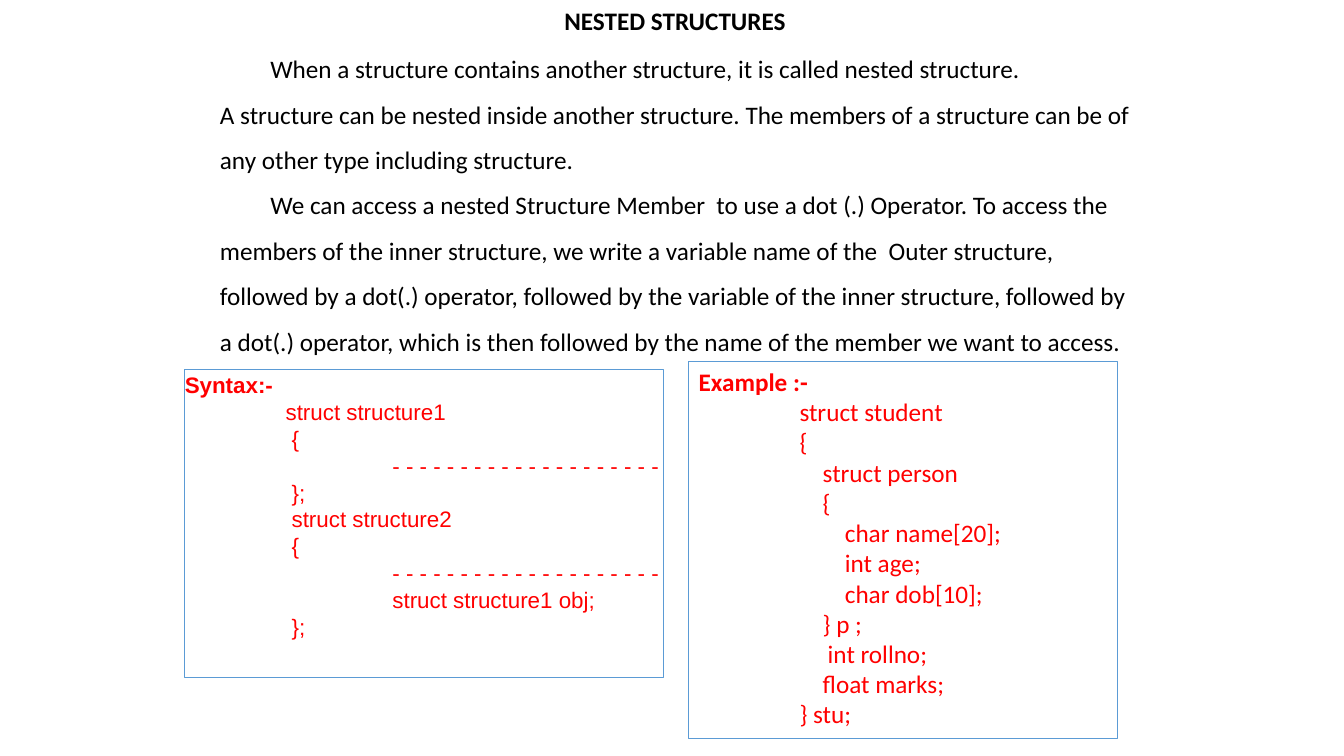
from dataclasses import dataclass

from pptx import Presentation
from pptx.dml.color import RGBColor as Color
from pptx.enum.shapes import MSO_SHAPE as Preset
from pptx.enum.text import MSO_ANCHOR as Anchor, PP_ALIGN as Align
from pptx.util import Inches, Pt


@dataclass(frozen=True)
class Theme:
    ink: str = "000000"
    code: str = "FF0000"
    border: str = "5B9BD5"
    paper: str = "FFFFFF"
    body_font: str = "Calibri"
    syntax_font: str = "Arial"
    body_size: float = 18
    syntax_size: float = 16
    border_width: float = 0.75
    leading: float = 1.5


class Page:
    """A slide on a grid of 160 columns by 90 rows."""

    COLUMNS, ROWS = 160, 90

    def __init__(self, deck, theme):
        self.theme = theme
        self.column = deck.slide_width / self.COLUMNS
        self.row = deck.slide_height / self.ROWS
        self.slide = deck.slides.add_slide(deck.slide_layouts[6])

    def place(self, left, top, width, height):
        return (round(left * self.column), round(top * self.row),
                round(width * self.column), round(height * self.row))

    def fill_frame(self, frame, lines, color, font, size, heading=False, leading=1.0):
        """Fill a frame with (indent in inches, text) lines; a heading makes the first bold."""
        for number, (indent, text) in enumerate(lines):
            para = frame.add_paragraph() if number else frame.paragraphs[0]
            para.alignment = Align.LEFT
            para.line_spacing = leading
            properties = para._p.get_or_add_pPr()
            for name, value in {"marL": Inches(indent), "indent": 0}.items():
                properties.set(name, str(value))
            span = para.add_run()
            span.text = text
            style = {"name": font, "size": Pt(size), "bold": heading and number == 0}
            for name, value in style.items():
                setattr(span.font, name, value)
            span.font.color.rgb = Color.from_string(color)

    def add_text(self, place, lines, wrap=True, **style):
        frame = self.slide.shapes.add_textbox(*self.place(*place)).text_frame
        frame.word_wrap = wrap
        self.fill_frame(frame, lines, self.theme.ink, self.theme.body_font,
                        self.theme.body_size, **style)

    def add_code_panel(self, place, lines, font, size, fill=None, **layout):
        panel = self.slide.shapes.add_shape(Preset.RECTANGLE, *self.place(*place))
        panel.shadow.inherit = False
        if fill:
            panel.fill.solid()
            panel.fill.fore_color.rgb = Color.from_string(fill)
        else:
            panel.fill.background()
        panel.line.color.rgb = Color.from_string(self.theme.border)
        panel.line.width = Pt(self.theme.border_width)
        for name, value in {"word_wrap": True, **layout}.items():
            setattr(panel.text_frame, name, value)
        self.fill_frame(panel.text_frame, lines, self.theme.code, font, size, heading=True)


EXPLANATION = [
    (0.5, "When a structure contains another structure, it is called nested structure."),
    (0, "A structure can be nested inside another structure. The members of a structure "
        "can be of any other type including structure."),
    (0.5, "We can access a nested Structure Member  to use a dot (.) Operator. "
          "To access the"),
    (0, "members of the inner structure, we write a variable name of the  Outer structure, "
        "followed by a dot(.) operator, followed by the variable of the inner structure, "
        "followed by a dot(.) operator, which is then followed by the name of the member "
        "we want to access."),
]

OUTER, INNER = 1.06, 2.06
DASHES = " ".join("-" * 20)
SYNTAX = [
    (0, "Syntax:-"),
    (1, "struct structure1"),
    (OUTER, "{"),
    (INNER, DASHES),
    (OUTER, "};"),
    (OUTER, "struct structure2"),
    (OUTER, "{"),
    (INNER, DASHES),
    (INNER, "struct structure1 obj;"),
    (OUTER, "};"),
]

MEMBER, NESTED = 1.23, 1.45
EXAMPLE = [
    (0, "Example :-"),
    (1, "struct student"),
    (1, "{"),
    (MEMBER, "struct person"),
    (MEMBER, "{"),
    (NESTED, "char name[20];"),
    (NESTED, "int age;"),
    (NESTED, "char dob[10];"),
    (MEMBER, "} p ;"),
    (1.28, "int rollno;"),
    (MEMBER, "float marks;"),
    (1, "} stu;"),
]


def main():
    deck = Presentation()
    deck.slide_width, deck.slide_height = Inches(13.33), Inches(7.5)
    theme = Theme()
    page = Page(deck, theme)
    page.add_text((25, 4, 111, 44.9), EXPLANATION, leading=theme.leading)
    page.add_text((66, 0, 29.8, 4.8), [(0, "NESTED STRUCTURES")],
                  wrap=False, heading=True)
    page.add_code_panel((22, 44, 57, 36.7), SYNTAX, theme.syntax_font,
                        theme.syntax_size, fill=theme.paper,
                        vertical_anchor=Anchor.MIDDLE, margin_left=0, margin_top=0,
                        margin_right=0, margin_bottom=Inches(0.36))
    page.add_code_panel((82, 43, 51, 44.9), EXAMPLE, theme.body_font,
                        theme.body_size, vertical_anchor=Anchor.TOP)
    deck.save("out.pptx")


if __name__ == "__main__":
    main()
